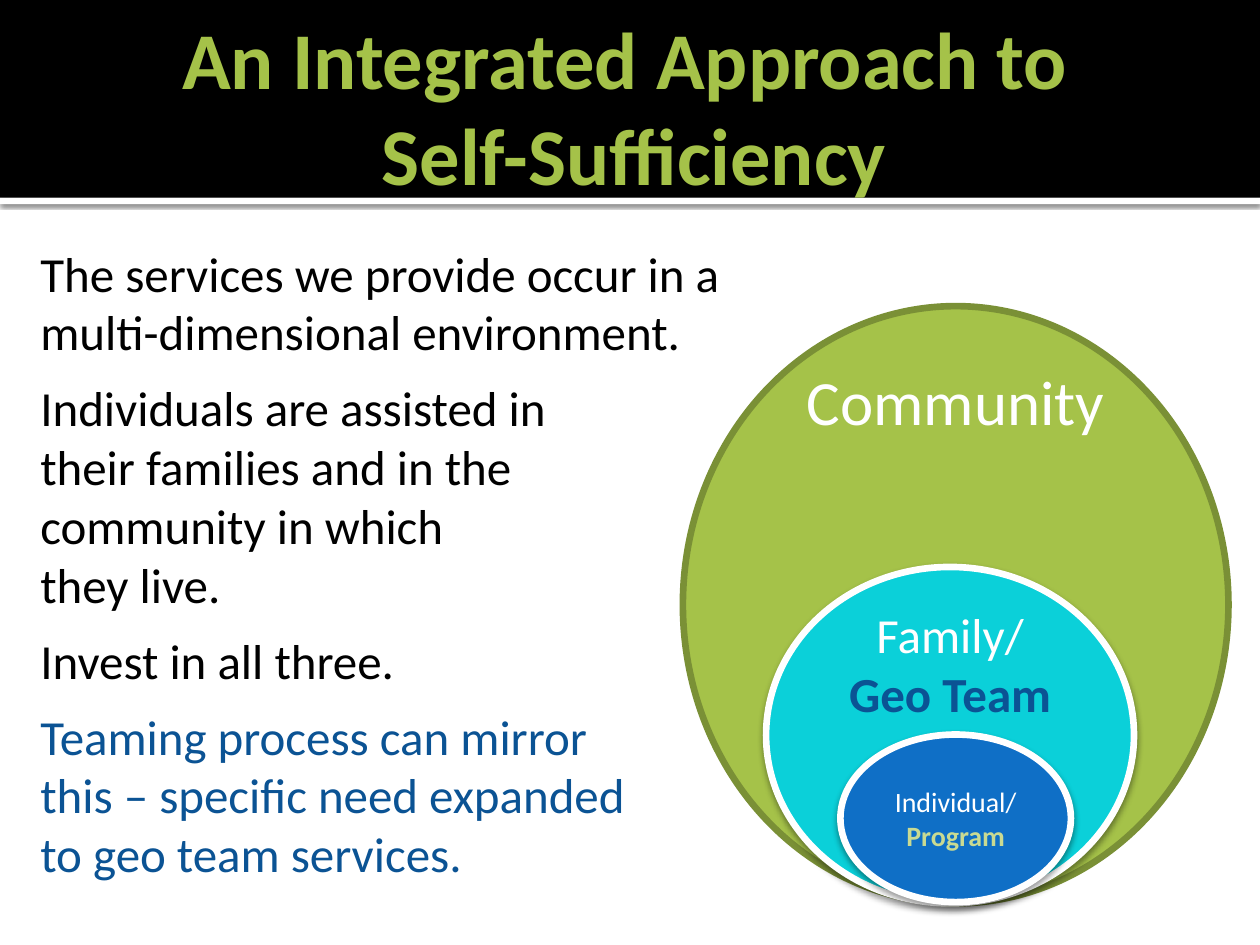
import pptx
import pptx.util
import pptx.dml.color
import pptx.enum.shapes
import pptx.enum.text
import pptx.oxml

Inches, Pt = pptx.util.Inches, pptx.util.Pt
RGB = pptx.dml.color.RGBColor
SHAPE = pptx.enum.shapes.MSO_SHAPE
ALIGN = pptx.enum.text.PP_ALIGN
ANCHOR = pptx.enum.text.MSO_ANCHOR

BLACK = RGB(0x00, 0x00, 0x00)
WHITE = RGB(0xFF, 0xFF, 0xFF)
GREEN = RGB(0xA5, 0xC2, 0x49)
DARK_GREEN = RGB(0x7A, 0x90, 0x36)
PALE_GREEN = RGB(0xC9, 0xDA, 0x92)
CYAN = RGB(0x0B, 0xD0, 0xD9)
BLUE = RGB(0x0F, 0x6F, 0xC6)
NAVY = RGB(0x0B, 0x53, 0x94)

# Content
TITLE = "An Integrated Approach to \vSelf-Sufficiency"
POINTS = [
    ("The services we provide occur in a\vmulti-dimensional environment.", BLACK),
    ("Individuals are assisted in\vtheir families and in the\vcommunity in which\vthey live.", BLACK),
    ("Invest in all three.", BLACK),
    ("Teaming process can mirror\vthis – specific need expanded\vto geo team services.", NAVY),
]
# Shadows: opacity %, blur, distance
RULE_SHADOW = (60, 2.5, 0.8)
RING_SHADOW = (38, 3.5, 2)
# bottom_inset lifts the label clear of the ring inside
RINGS = [
    {"at": (5.42, 2.43, 4.33, 4.74), "fill": GREEN, "line": DARK_GREEN, "shadow": None,
     "bottom_inset": 3.25, "size": 36, "lines": [("Community", WHITE, False)]},
    {"at": (6.08, 4.5, 2.92, 2.67), "fill": CYAN, "line": WHITE, "shadow": RING_SHADOW,
     "bottom_inset": 1.14, "size": 28,
     "lines": [("Family/", WHITE, False), ("Geo Team", NAVY, True)]},
    {"at": (6.67, 5.83, 1.83, 1.33), "fill": BLUE, "line": WHITE, "shadow": RING_SHADOW,
     "bottom_inset": 0, "size": 16,
     "lines": [("Individual/", WHITE, False), ("Program", PALE_GREEN, True)]},
]


def set_attributes(target, values):
    for name, value in values.items():
        setattr(target, name, value)


def place(shape, at):
    set_attributes(shape, dict(zip(("left", "top", "width", "height"), map(Inches, at))))


def set_frame(frame, insets, anchor):
    names = ("margin_left", "margin_top", "margin_right", "margin_bottom")
    set_attributes(frame, dict(zip(names, map(Inches, insets))))
    set_attributes(frame, {"word_wrap": True, "vertical_anchor": anchor,
                           "auto_size": pptx.enum.text.MSO_AUTO_SIZE.NONE})


def write(para, text, size, color, bold=False, align=ALIGN.LEFT):
    para.text = text
    para.alignment = align
    for span in para.runs:
        set_attributes(span.font, {"name": "Calibri", "size": Pt(size), "bold": bold})
        span.font.color.rgb = color


def add_shadow(shape, opacity, blur, distance):
    effects = shape.element.spPr.find(pptx.oxml.ns.qn("a:effectLst"))
    effects.append(pptx.oxml.parse_xml(
        f'<a:outerShdw {pptx.oxml.ns.nsdecls("a")} blurRad="{Pt(blur)}" dist="{Pt(distance)}" '
        f'dir="5400000" rotWithShape="0"><a:srgbClr val="000000">'
        f'<a:alpha val="{opacity * 1000}"/></a:srgbClr></a:outerShdw>'))


def add_filled(page, kind, at, fill, line=None, shadow=None):
    shape = page.shapes.add_shape(kind, *map(Inches, at))
    shape.shadow.inherit = False
    shape.fill.solid()
    shape.fill.fore_color.rgb = fill
    if line is None:
        shape.line.fill.background()
    else:
        shape.line.color.rgb = line
        shape.line.width = Pt(3.8)
    if shadow:
        add_shadow(shape, *shadow)
    return shape


def add_header(page):
    title = page.shapes.title
    rule = add_filled(page, SHAPE.RECTANGLE, (0, 1.57, 10, 0.05), WHITE, shadow=RULE_SHADOW)
    band = add_filled(page, SHAPE.RECTANGLE, (0, 0, 10, 1.57), BLACK)
    for shape in (rule, band):  # behind the title
        title.element.addprevious(shape.element)
    place(title, (0.17, 0.17, 9.67, 1.33))
    set_frame(title.text_frame, (0.1, 0.05, 0.05, 0.05), ANCHOR.MIDDLE)
    write(title.text_frame.paragraphs[0], TITLE, 46, GREEN, True, ALIGN.CENTER)


def add_points(page):
    box = page.shapes.add_textbox(*map(Inches, (0.17, 1.83, 9.58, 5.5)))
    frame = box.text_frame
    set_frame(frame, (0.15, 0.1, 0.1, 0.05), ANCHOR.TOP)
    for index, (text, color) in enumerate(POINTS):
        para = frame.add_paragraph() if index else frame.paragraphs[0]
        write(para, text, 28, color)
        para.space_after = Pt(9.75)


def add_ring(page, ring):
    shape = add_filled(page, SHAPE.OVAL, ring["at"], ring["fill"], ring["line"], ring["shadow"])
    frame = shape.text_frame
    set_frame(frame, (0, 0, 0, ring["bottom_inset"]), ANCHOR.MIDDLE)
    for index, (text, color, bold) in enumerate(ring["lines"]):
        para = frame.add_paragraph() if index else frame.paragraphs[0]
        write(para, text, ring["size"], color, bold, ALIGN.CENTER)


def main():
    deck = pptx.Presentation()
    set_attributes(deck, {"slide_width": Inches(10), "slide_height": Inches(7.5)})
    page = deck.slides.add_slide(deck.slide_layouts[5])
    add_header(page)
    add_points(page)
    for ring in RINGS:
        add_ring(page, ring)
    deck.save("out.pptx")


if __name__ == "__main__":
    main()
